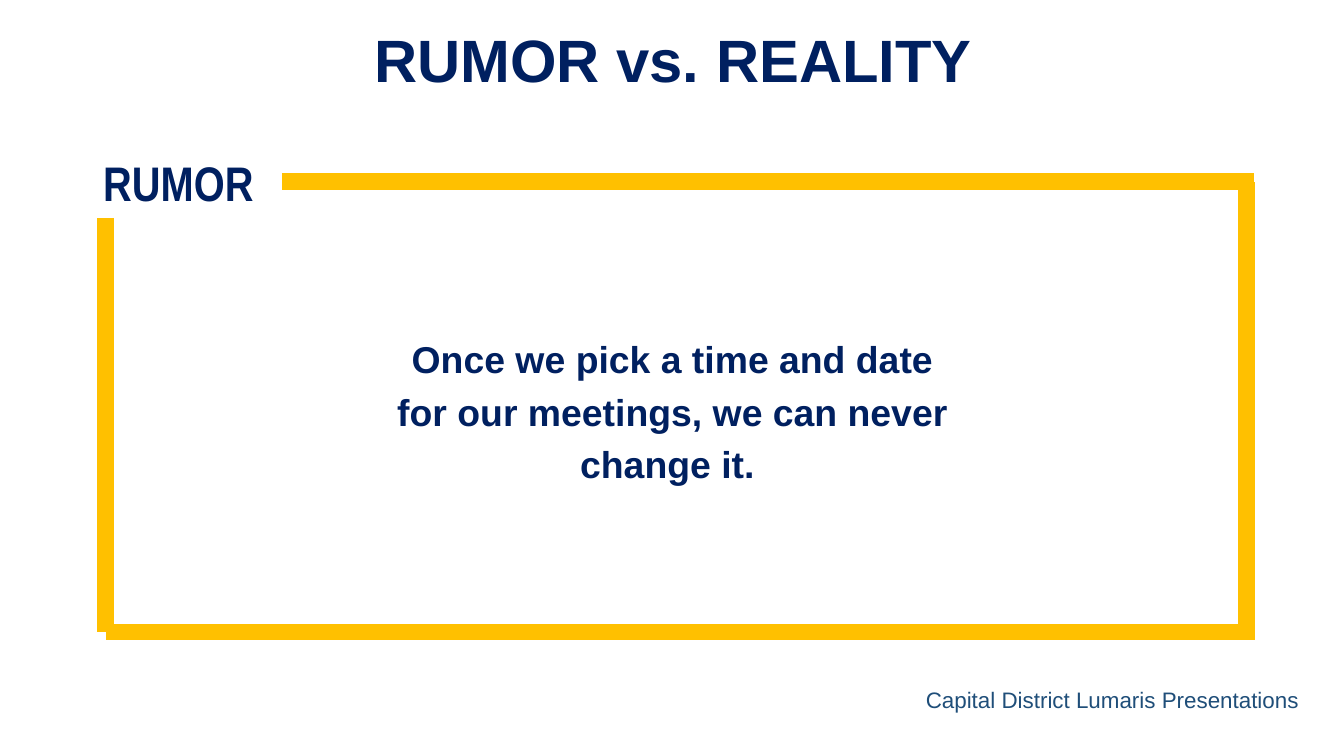
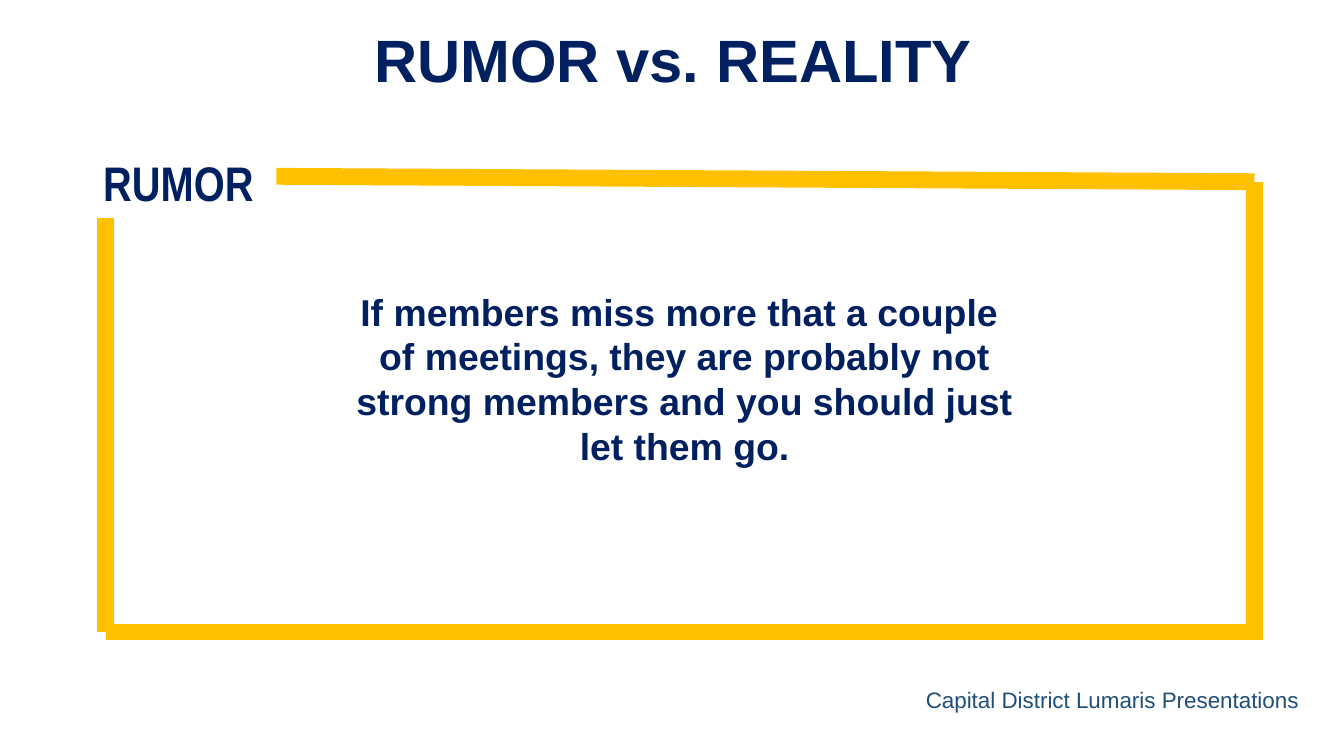
from dataclasses import dataclass

from lxml.etree import SubElement
from pptx import Presentation
from pptx.dml.color import RGBColor
from pptx.enum.shapes import MSO_CONNECTOR as Connector
from pptx.enum.text import MSO_ANCHOR as Anchor, MSO_AUTO_SIZE as AutoSize, PP_ALIGN as Align
from pptx.oxml.ns import qn
from pptx.util import Inches, Pt

NAVY = RGBColor(0x00, 0x20, 0x60)
STEEL = RGBColor(0x1F, 0x4E, 0x79)
GOLD = RGBColor(0xFF, 0xC0, 0x00)

SLIDE_WIDTH = Inches(10)
SLIDE_HEIGHT = SLIDE_WIDTH * 9 // 16
GRID = SLIDE_WIDTH / 100  # one column or row of the page grid
TITLE_ONLY = 5


@dataclass
class Box:
    """An area of the page, in grid columns and rows."""
    left: float
    top: float
    width: float
    height: float

    @property
    def right(self):
        return self.left + self.width

    @property
    def bottom(self):
        return self.top + self.height


TITLE_BOX = Box(4.9, 1.2, 90.4, 6.4)
FOOTER_BOX = Box(67.9, 50.6, 30.4, 3)


def grid(count):
    return round(count * GRID)


def place(shape, box):
    """Move a text shape to its box and return its cleared text frame."""
    shape.left, shape.top = grid(box.left), grid(box.top)
    shape.width, shape.height = grid(box.width), grid(box.height)
    frame = shape.text_frame
    frame.word_wrap = True
    frame.auto_size = AutoSize.NONE
    frame.vertical_anchor = Anchor.TOP
    return frame


def add_text_box(page, box):
    return place(page.shapes.add_textbox(0, 0, 0, 0), box)


def write(frame, lines, size, color=NAVY, font="Arial", bold=True,
          align=Align.LEFT, first_gap=0, gap=0):
    """Append one paragraph per line, filling the empty first one if there is one."""
    for index, line in enumerate(lines):
        para = frame.add_paragraph() if frame.text else frame.paragraphs[0]
        para.text = line
        para.alignment = align
        para.line_spacing = 1.0
        para.space_before = Pt(gap if index else first_gap)
        for span in para.runs:
            span.font.name, span.font.size = font, Pt(size)
            span.font.bold, span.font.color.rgb = bold, color


def write_statement(frame, lines, **gaps):
    write(frame, lines, 20, align=Align.CENTER, **gaps)


def add_bar(page, start, end):
    points = [grid(value) for value in (*start, *end)]
    bar = page.shapes.add_connector(Connector.STRAIGHT, *points)
    bar.line.color.rgb = GOLD
    bar.line.width = Pt(9)
    SubElement(bar._element.spPr, qn("a:effectLst"))


def add_open_frame(page, box, label_gap, rise, top_overhang, bottom_overhang, drop):
    """Draw four bars round the box, open at the top left for the label."""
    add_bar(page, (box.left + label_gap, box.top - rise),
            (box.right + top_overhang, box.top))
    add_bar(page, (box.left, box.bottom), (box.right + bottom_overhang, box.bottom))
    add_bar(page, (box.right, box.bottom + drop), (box.right, box.top))
    add_bar(page, (box.left, box.top + 2.7), (box.left, box.bottom))


def add_rumor_page(deck, label_box, frame_box, **frame_style):
    """Add a page with its title, footer and bars; return it with the label's frame."""
    page = deck.slides.add_slide(deck.slide_layouts[TITLE_ONLY])
    write(add_text_box(page, FOOTER_BOX), ["Capital District Lumaris Presentations"],
          12, color=STEEL, bold=False)
    write(place(page.shapes.title, TITLE_BOX), ["RUMOR vs. REALITY"], 32,
          align=Align.CENTER)
    label = add_text_box(page, label_box)
    write(label, ["RUMOR"], 26, font="Arial Narrow")
    add_open_frame(page, frame_box, **frame_style)
    return page, label


def add_meeting_time_page(deck):
    _, label = add_rumor_page(
        deck, Box(6.7, 10.9, 86.7, 26.8), Box(7.87, 13.52, 84.9, 33.5),
        label_gap=13.1, rise=0, top_overhang=0.55, bottom_overhang=0.55, drop=0.6)
    write_statement(label, ["Once we pick a time and date",
                            "for our meetings, we can never",
                            "change it. "], first_gap=67, gap=4)


def add_missed_meetings_page(deck):
    page, _ = add_rumor_page(
        deck, Box(6.7, 10.9, 86.7, 5.4), Box(7.87, 13.52, 85.47, 33.5),
        label_gap=12.7, rise=0.4, top_overhang=0, bottom_overhang=0.65, drop=0)
    statement = add_text_box(page, Box(11.1, 21, 79.7, 14.4))
    write_statement(statement, ["If members miss more that a couple ",
                                "of meetings, they are probably not",
                                "strong members and you should just",
                                "let them go."])


def main():
    deck = Presentation()
    deck.slide_width, deck.slide_height = SLIDE_WIDTH, SLIDE_HEIGHT
    add_meeting_time_page(deck)
    add_missed_meetings_page(deck)
    deck.save("out.pptx")


if __name__ == "__main__":
    main()
